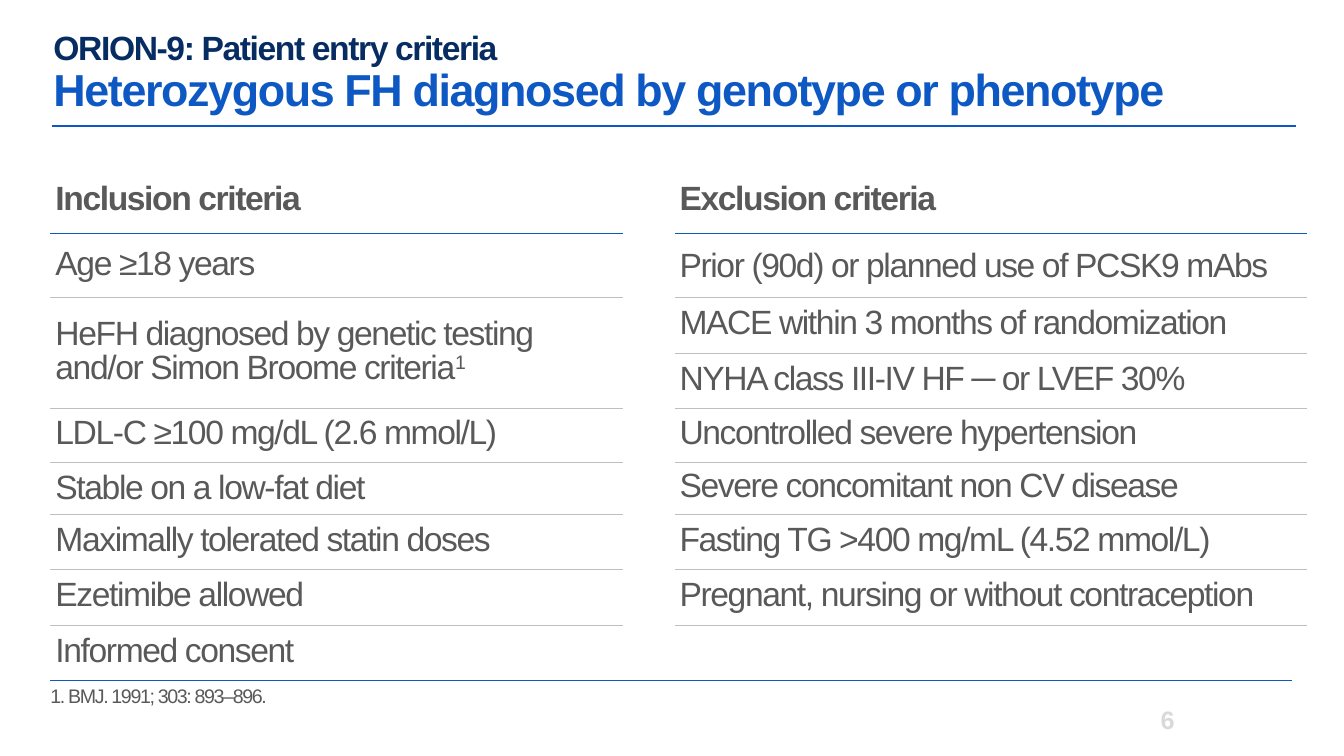
"""Build the ORION-9 patient entry criteria slide."""
from lxml.etree import SubElement
from pptx import Presentation
from pptx.dml.color import RGBColor
from pptx.enum.shapes import MSO_CONNECTOR as Connector, MSO_SHAPE as Shape
from pptx.enum.text import MSO_ANCHOR as Anchor, MSO_AUTO_SIZE as AutoSize, PP_ALIGN as Align
from pptx.oxml.ns import qn
from pptx.util import Inches, Pt

NAVY, BLUE, GRAY, RULE, PALE, WHITE = "072C62", "0E58C4", "595959", "BFBFBF", "D9D9D9", "FFFFFF"
NO_GRID = "{2D5ABB26-0587-4C30-8999-92F81FD0307C}"

TITLE = [("ORION-9: Patient entry criteria", 24, NAVY),
         ("Heterozygous FH diagnosed by genotype or phenotype", 32, BLUE)]
ROWS = [
    ("Inclusion criteria", "Exclusion criteria"),
    ("Age ≥18 years", "Prior (90d) or planned use of PCSK9 mAbs"),
    ("HeFH diagnosed by genetic testing and/or Simon Broome criteria",
     "MACE within 3 months of randomization"),
    ("", "NYHA class III-IV HF ─ or LVEF 30%"),
    ("LDL-C ≥100 mg/dL (2.6 mmol/L)", "Uncontrolled severe hypertension"),
    ("Stable on a low-fat diet", "Severe concomitant non CV disease"),
    ("Maximally tolerated statin doses", "Fasting TG >400 mg/mL (4.52 mmol/L)"),
    ("Ezetimibe allowed", "Pregnant, nursing or without contraception"),
    ("Informed consent", ""),
]
NATURAL_SPACING = {(1, 1), (5, 0)}
MERGED_ROW = 2
FOOTNOTE = "1. BMJ. 1991; 303: 893–896."
PAGE_NUMBER = "6"

LEFT, TABLE_TOP = 0.5, 1.77
COLUMNS = [5.68, 0.51, 6.27]
HEIGHTS = [0.55, 0.63, 0.55, 0.55, 0.53, 0.52, 0.55, 0.55, 0.55]
RULES = [(0.52, 12.85, 1.25, 0.75), (LEFT, 12.81, 6.75, 0.25)]


def color(value):
    """Turn a hex string into a colour."""
    return RGBColor.from_string(value)


def add_span(para, text, size, ink, bold=False, spacing=-100, baseline=0):
    """Add one formatted run to a paragraph."""
    span = para.add_run()
    span.text = text
    span.font.name, span.font.size, span.font.bold = "Arial", Pt(size), bold
    span.font.color.rgb = color(ink)
    properties = span._r.get_or_add_rPr()
    properties.set("spc", str(spacing))
    if baseline:
        properties.set("baseline", str(baseline))


def set_frame(frame, anchor, bottom=0, wrap=True):
    """Set the margins, anchor and wrapping of a text frame."""
    frame.margin_left = frame.margin_top = frame.margin_right = 0
    frame.margin_bottom = Inches(bottom)
    frame.vertical_anchor, frame.word_wrap = anchor, wrap
    frame.auto_size = AutoSize.NONE


def add_rule(page, start, end, top, width):
    """Draw a horizontal blue line."""
    line = page.shapes.add_connector(
        Connector.STRAIGHT, Inches(start), Inches(top), Inches(end), Inches(top))
    line.line.color.rgb, line.line.width = color(BLUE), Pt(width)
    SubElement(line._element.spPr, qn("a:effectLst"))


def set_borders(cell, top, bottom):
    """Give a cell its top and bottom borders, each a colour and width or None."""
    properties = cell._tc.get_or_add_tcPr()
    for side, border in (("L", None), ("R", None), ("T", top), ("B", bottom)):
        edge = SubElement(properties, qn(f"a:ln{side}"))
        if border:
            edge.set("w", str(Pt(border[1])))
            fill = SubElement(edge, qn("a:solidFill"))
            SubElement(fill, qn("a:srgbClr")).set("val", border[0])
        else:
            edge.set("w", "0")
            SubElement(edge, qn("a:noFill"))
    cell.fill.background()


def add_title(page):
    """Fill the title placeholder with its two lines."""
    title = page.shapes.title
    title.left, title.top, title.width, title.height = map(Inches, (0.53, 0.28, 11.26, 0.97))
    set_frame(title.text_frame, Anchor.BOTTOM, bottom=0.1)
    para = title.text_frame.paragraphs[0]
    para.alignment, para.line_spacing = Align.LEFT, 0.9
    for index, (text, size, ink) in enumerate(TITLE):
        if index:
            para.add_line_break()
        add_span(para, text, size, ink, bold=True)


def add_criteria(page):
    """Add the criteria table with a blank gap column."""
    frame = page.shapes.add_table(
        len(ROWS), len(COLUMNS), Inches(LEFT), Inches(TABLE_TOP),
        Inches(sum(COLUMNS)), Inches(sum(HEIGHTS)))
    table = frame.table
    table.first_row = table.horz_banding = False
    table._tbl.tblPr.find(qn("a:tableStyleId")).text = NO_GRID
    for column, width in zip(table.columns, COLUMNS):
        column.width = Inches(width)
    for row, height in zip(table.rows, HEIGHTS):
        row.height = Inches(height)
    table.cell(MERGED_ROW, 0).merge(table.cell(MERGED_ROW + 1, 0))

    thin, strong = (RULE, 0.25), (BLUE, 1)
    last = len(ROWS) - 1
    for row, texts in enumerate(ROWS):
        top = None if row == 0 else strong if row == 1 else thin
        bottom = strong if row == 0 else None if row == last else thin
        set_borders(table.cell(row, 1), None, None)
        for side, text in enumerate(texts):
            cell = table.cell(row, side * 2)
            set_borders(cell, top, bottom)
            cell.margin_left = cell.margin_right = Inches(0.05)
            cell.margin_top = cell.margin_bottom = Inches(0.05)
            cell.vertical_anchor = Anchor.MIDDLE if row else Anchor.TOP
            if not text:
                continue
            para = cell.text_frame.paragraphs[0]
            if (row, side) not in NATURAL_SPACING:
                para.line_spacing = Pt(24)
            add_span(para, text, 24, GRAY, bold=row == 0)
            if (row, side) == (MERGED_ROW, 0):
                add_span(para, "1", 24, GRAY, baseline=30000)


def add_footer(page):
    """Add the footnote and the page number."""
    note = page.shapes.add_shape(
        Shape.RECTANGLE, Inches(LEFT), Inches(6.78), Inches(6.15), Inches(0.24))
    note.shadow.inherit = False
    note.fill.solid()
    note.fill.fore_color.rgb = color(WHITE)
    note.line.fill.background()
    set_frame(note.text_frame, Anchor.BOTTOM)
    para = note.text_frame.paragraphs[0]
    para.alignment = Align.LEFT
    add_span(para, FOOTNOTE, 14, GRAY)

    number = page.shapes.add_textbox(Inches(11.4), Inches(6.77), Inches(0.25), Inches(0.74))
    set_frame(number.text_frame, Anchor.MIDDLE)
    para = number.text_frame.paragraphs[0]
    para.alignment = Align.RIGHT
    add_span(para, PAGE_NUMBER, 18, PALE, bold=True, spacing=0)


def main():
    """Build and save the deck."""
    deck = Presentation()
    deck.slide_width, deck.slide_height = Inches(13.33), Inches(7.5)
    page = deck.slides.add_slide(deck.slide_layouts[5])
    for rule in RULES:
        add_rule(page, *rule)
    add_criteria(page)
    add_title(page)
    add_footer(page)
    deck.save("out.pptx")


if __name__ == "__main__":
    main()
